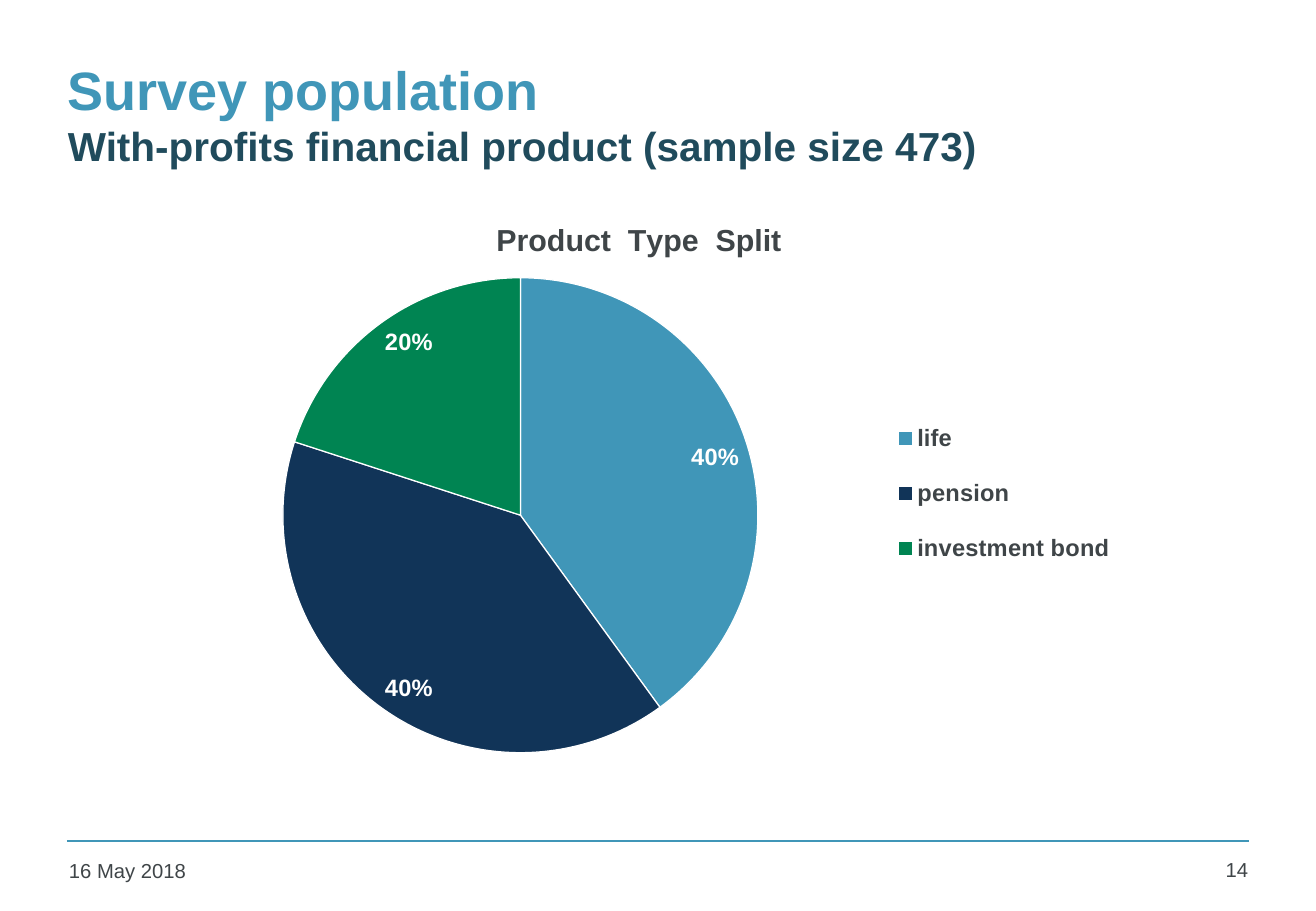
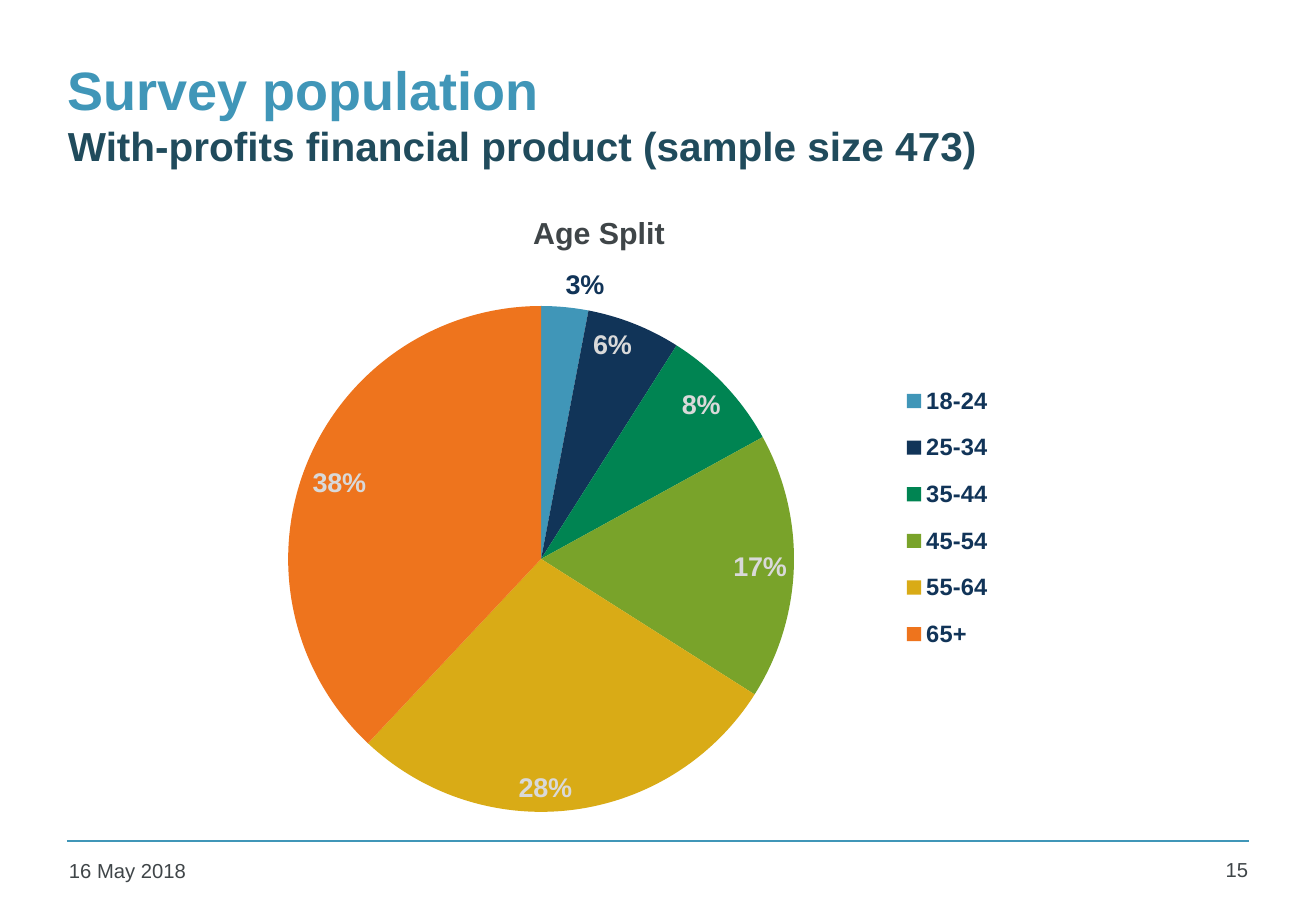
from lxml import etree
from pptx import Presentation
from pptx.chart.data import CategoryChartData
from pptx.dml.color import RGBColor
from pptx.enum.chart import XL_CHART_TYPE, XL_LABEL_POSITION, XL_LEGEND_POSITION
from pptx.enum.shapes import MSO_CONNECTOR
from pptx.enum.text import MSO_ANCHOR, PP_ALIGN
from pptx.oxml import parse_xml
from pptx.oxml.ns import nsdecls, qn
from pptx.util import Emu, Pt

PIE = XL_CHART_TYPE.PIE
INSIDE_END = XL_LABEL_POSITION.INSIDE_END
OUTSIDE_END = XL_LABEL_POSITION.OUTSIDE_END
LEGEND_RIGHT = XL_LEGEND_POSITION.RIGHT
STRAIGHT = MSO_CONNECTOR.STRAIGHT
TOP, MIDDLE = MSO_ANCHOR.TOP, MSO_ANCHOR.MIDDLE
LEFT, RIGHT = PP_ALIGN.LEFT, PP_ALIGN.RIGHT

EMU_PER_PX = 7526
FONT = "Arial"
COLOURS = {
    "blue": "4096B8", "teal": "204B5C", "grey": "3F4548", "navy": "113458",
    "green": "008452", "lime": "79A32A", "gold": "D9AB16", "orange": "EE741D",
    "white": "FFFFFF", "silver": "D9D9D9",
}
SLICE_COLOURS = ["blue", "navy", "green", "lime", "gold", "orange"]


def px(length):
    """Turn px into EMU."""
    return Emu(length * EMU_PER_PX)


def colour(name):
    """Return a named colour."""
    return RGBColor.from_string(COLOURS[name])


class SurveyDeck:
    """Holds the shared style and the current slide."""

    def __init__(self):
        """Start an empty presentation."""
        self.presentation = Presentation()
        self.presentation.slide_width = px(1316)
        self.presentation.slide_height = px(911)
        self.slide = None

    def style(self, font, size, name, bold=False):
        """Set the look of a font."""
        font.name, font.size, font.bold = FONT, Pt(size), bold
        font.color.rgb = colour(name)

    def add_slide(self, number):
        """Add a slide with its title and footer."""
        layout = self.presentation.slide_layouts[6]
        self.slide = self.presentation.slides.add_slide(layout)
        self.title("Survey population", "With-profits financial product (sample size 473)")
        self.rule(67, 1249, 841)
        self.footer("16 May 2018", (57, 852, 290, 44), LEFT)
        self.footer(str(number), (1166, 851, 94, 45), RIGHT)

    def text_box(self, box, anchor):
        """Add a text box and return its frame."""
        frame = self.slide.shapes.add_textbox(*map(px, box)).text_frame
        frame.word_wrap = True
        frame.vertical_anchor = anchor
        return frame

    def title(self, heading, subheading):
        """Add the two-line title."""
        paragraph = self.text_box((56, 37, 1193, 152), MIDDLE).paragraphs[0]
        run = paragraph.add_run()
        run.text = heading
        self.style(run.font, 32, "blue", True)
        paragraph.add_line_break()
        run = paragraph.add_run()
        run.text = subheading
        self.style(run.font, 24, "teal", True)

    def footer(self, text, box, alignment):
        """Add one footer text."""
        paragraph = self.text_box(box, TOP).paragraphs[0]
        paragraph.text = text
        paragraph.alignment = alignment
        self.style(paragraph.font, 12, "grey")

    def rule(self, left, right, top):
        """Add the line above the footer."""
        line = self.slide.shapes.add_connector(STRAIGHT, px(left), px(top), px(right), px(top))
        line.line.color.rgb = colour("blue")
        line.line.width = Pt(1)
        etree.SubElement(line.element.spPr, qn("a:effectLst"))

    def manual_layout(self, frame, box, target=""):
        """Build a chart layout from a box in slide px."""
        left, top, width, height = frame
        fractions = {
            "x": (box[0] - left) / width, "y": (box[1] - top) / height,
            "w": box[2] / width, "h": box[3] / height,
        }
        values = "".join(f'<c:{key} val="{value:.3f}"/>' for key, value in fractions.items())
        modes = '<c:xMode val="edge"/><c:yMode val="edge"/>'
        return parse_xml(
            f'<c:layout {nsdecls("c")}><c:manualLayout>{target}{modes}{values}'
            "</c:manualLayout></c:layout>"
        )

    def pie(self, title, shares, frame, plot_box, legend_box, label_style,
            legend_colour="grey", outlined=False):
        """Add a pie chart with percentages and a legend."""
        data = CategoryChartData()
        data.categories = list(shares)
        data.add_series("Series 1", list(shares.values()))
        chart = self.slide.shapes.add_chart(PIE, *map(px, frame), data).chart
        self.style(chart.font, 10, "grey")
        chart.has_title = True
        run = chart.chart_title.text_frame.paragraphs[0].add_run()
        run.text = title
        self.style(run.font, 18, "grey", True)
        chart.chart_title.include_in_layout = False
        chart.has_legend = True
        chart.legend.position = LEGEND_RIGHT
        chart.legend.include_in_layout = False
        self.style(chart.legend.font, 14, legend_colour, True)

        plot = chart.plots[0]
        plot.vary_by_categories = True
        series = plot.series[0]
        for index, name in zip(range(len(shares)), SLICE_COLOURS):
            point_format = series.points[index].format
            point_format.fill.solid()
            point_format.fill.fore_color.rgb = colour(name)
            if outlined:
                point_format.line.color.rgb = colour("white")
                point_format.line.width = Pt(0.75)
            else:
                point_format.line.fill.background()

        labels = series.data_labels
        labels.show_value = False
        labels.show_percentage = True
        labels.number_format = "0%"
        labels.number_format_is_linked = False
        labels.position = INSIDE_END
        self.style(labels.font, *label_style, True)

        plot_area = chart.element.xpath(".//c:plotArea")[0]
        for layout in plot_area.findall(qn("c:layout")):
            plot_area.remove(layout)
        inner = '<c:layoutTarget val="inner"/>'
        plot_area.insert(0, self.manual_layout(frame, plot_box, inner))
        legend = chart.element.xpath(".//c:legend")[0]
        for layout in legend.findall(qn("c:layout")):
            legend.remove(layout)
        legend.find(qn("c:legendPos")).addnext(self.manual_layout(frame, legend_box))
        return chart

    def outside_label(self, chart, index, size, name):
        """Move one percentage outside its slice."""
        label = chart.plots[0].series[0].points[index].data_label
        self.style(label.font, size, name, True)
        label.position = OUTSIDE_END
        element = chart.element.xpath(f".//c:dLbl[c:idx/@val='{index}']")[0]
        element.find(qn("c:showVal")).set("val", "0")
        element.find(qn("c:showPercent")).set("val", "1")


def main():
    """Build and save the slides."""
    deck = SurveyDeck()

    deck.add_slide(14)
    deck.pie(
        "Product  Type  Split",
        {"life": 40, "pension": 40, "investment bond": 20},
        frame=(151, 197, 976, 573),
        plot_box=(283, 278, 475, 475),
        legend_box=(892, 397, 224, 193),
        label_style=(14, "white"),
        outlined=True,
    )

    deck.add_slide(15)
    chart = deck.pie(
        "Age Split",
        {"18-24": 3, "25-34": 6, "35-44": 8, "45-54": 17, "55-64": 28, "65+": 38},
        frame=(132, 188, 934, 642),
        plot_box=(288, 306, 506, 506),
        legend_box=(892, 368, 110, 300),
        label_style=(16, "silver"),
        legend_colour="navy",
    )
    deck.outside_label(chart, 0, 16, "navy")

    deck.presentation.save("out.pptx")


if __name__ == "__main__":
    main()
